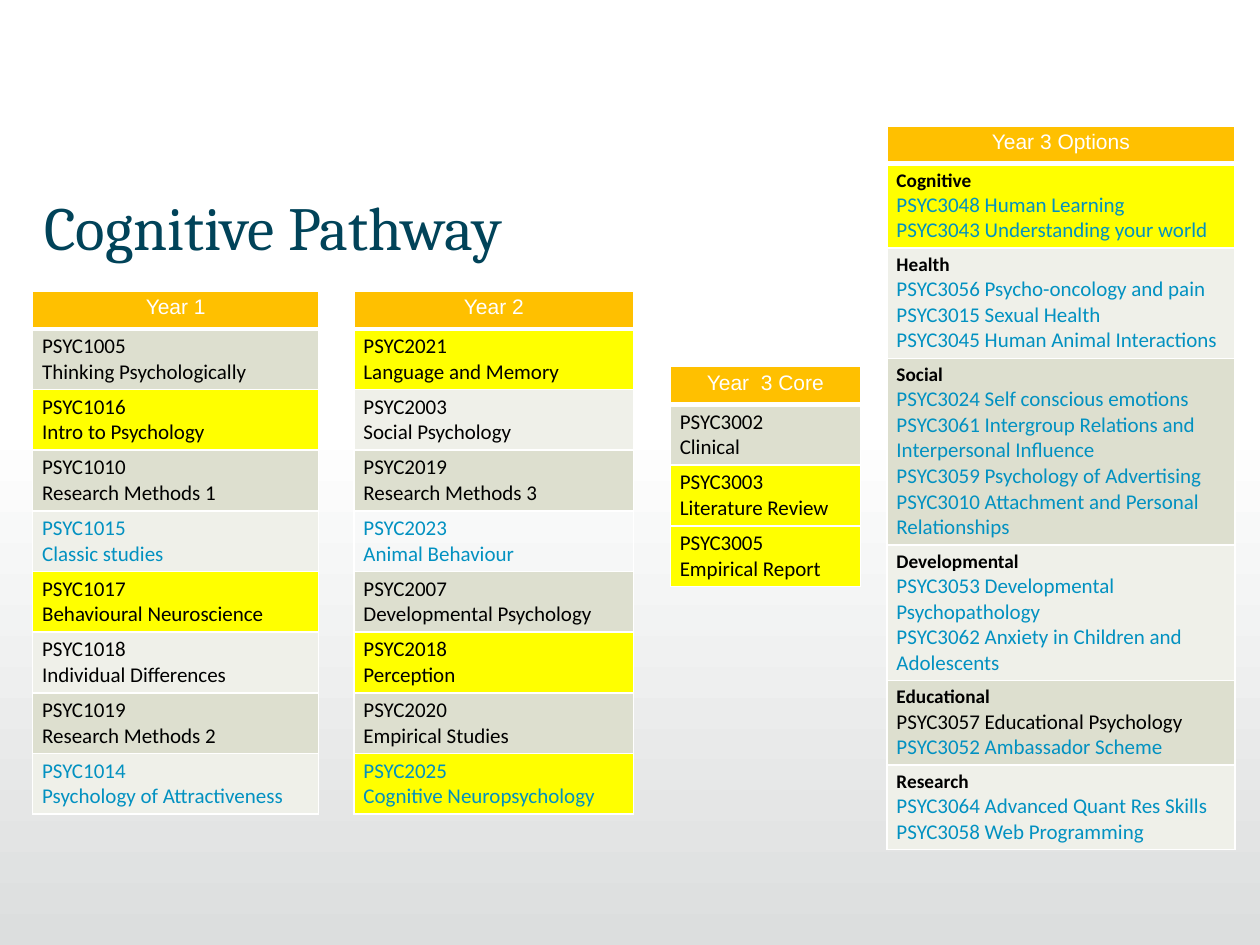
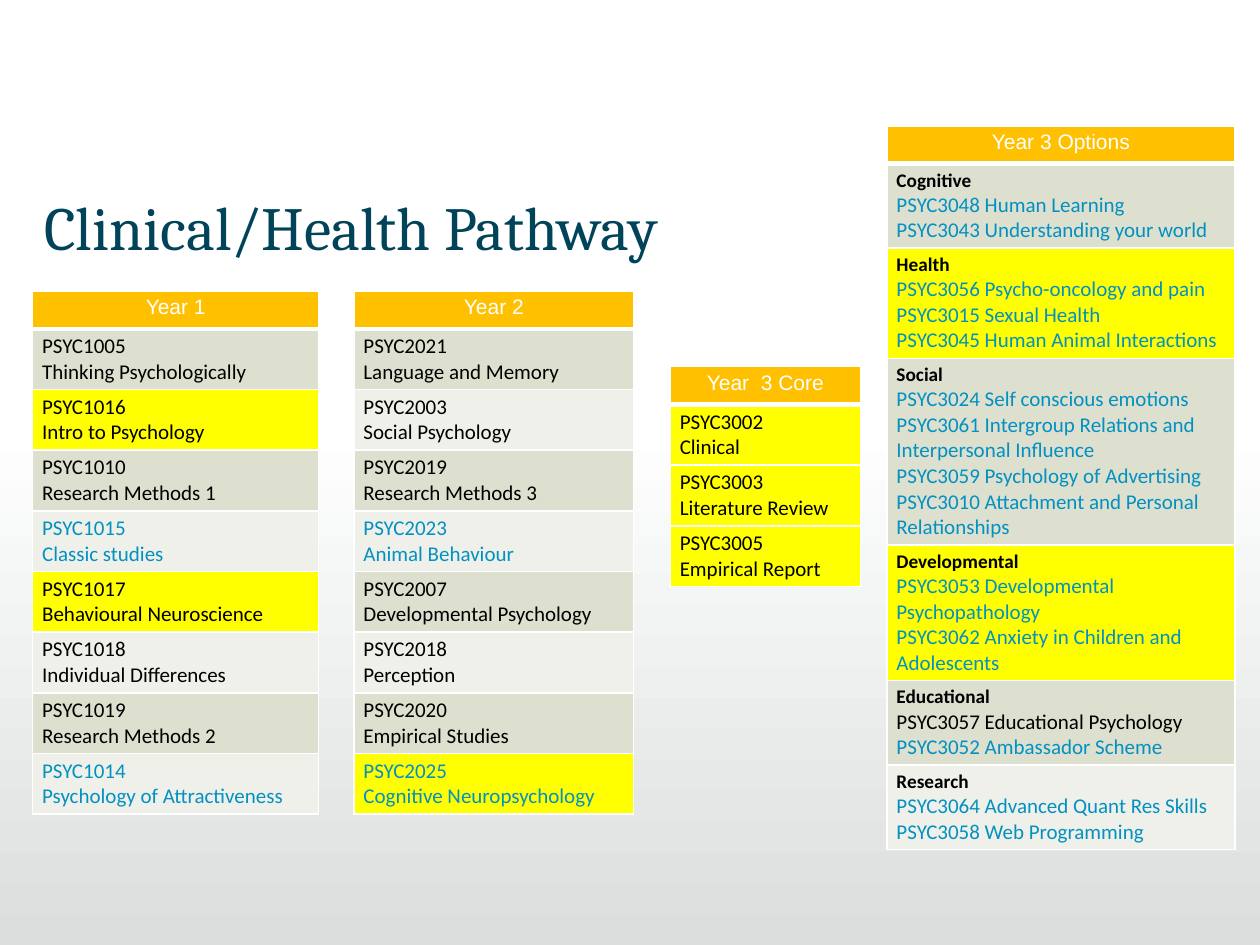
import pptx
import pptx.dml.color
import pptx.enum.shapes
import pptx.enum.text
import pptx.oxml
import pptx.oxml.ns
import pptx.util

Inches = pptx.util.Inches
Pt = pptx.util.Pt
RGBColor = pptx.dml.color.RGBColor

WHITE = RGBColor(0xFF, 0xFF, 0xFF)
BLACK = RGBColor(0, 0, 0)
MIST = RGBColor(0xDC, 0xDE, 0xDE)
NAVY = RGBColor(0x01, 0x43, 0x59)
BLUE = RGBColor(0x02, 0x91, 0xC1)
AMBER = RGBColor(0xFF, 0xC0, 0x00)
YELLOW = RGBColor(0xFF, 0xFF, 0x00)
BANDS = (RGBColor(0xDD, 0xDF, 0xCF), RGBColor(0xEF, 0xF0, 0xE9))

TITLE = {"name": "Cambria", "size": Pt(35), "bold": False, "color": NAVY}
HEADER = {"name": "Arial", "size": Pt(12), "bold": False, "color": WHITE}
AREA = {"name": "Calibri", "size": Pt(11), "bold": True, "color": BLACK}
CORE = {"name": "Calibri", "size": Pt(12), "bold": False, "color": BLACK}
OPTION = {**CORE, "color": BLUE}

CELL_MARGINS = {
    "margin_left": Pt(5.4),
    "margin_right": Pt(5.4),
    "margin_top": Pt(2.7),
    "margin_bottom": Pt(2.7),
}
TITLE_FRAME = {
    "margin_left": 0,
    "margin_right": Inches(0.1),
    "margin_top": Inches(0.05),
    "margin_bottom": Inches(0.05),
    "word_wrap": True,
    "auto_size": pptx.enum.text.MSO_AUTO_SIZE.NONE,
    "vertical_anchor": pptx.enum.text.MSO_ANCHOR.TOP,
}
HEADER_HEIGHT = 0.3
COURSE_HEIGHT = 0.47
AREA_HEIGHTS = (0.65, 0.85, 1.45, 1.05, 0.65, 0.65)

YEAR_TABLES = (
    ("Year 1", 0.26, 2.31, 2.27, (
        ("PSYC1005", "Thinking Psychologically"),
        ("PSYC1016", "Intro to Psychology"),
        ("PSYC1010", "Research Methods 1"),
        ("PSYC1015", "Classic studies"),
        ("PSYC1017", "Behavioural Neuroscience"),
        ("PSYC1018", "Individual Differences"),
        ("PSYC1019", "Research Methods 2"),
        ("PSYC1014", "Psychology of Attractiveness"),
    )),
    ("Year 2", 2.81, 2.31, 2.22, (
        ("PSYC2021", "Language and Memory"),
        ("PSYC2003", "Social Psychology"),
        ("PSYC2019", "Research Methods 3"),
        ("PSYC2023", "Animal Behaviour"),
        ("PSYC2007", "Developmental Psychology"),
        ("PSYC2018", "Perception"),
        ("PSYC2020", "Empirical Studies"),
        ("PSYC2025", "Cognitive Neuropsychology"),
    )),
    ("Year  3 Core", 5.32, 2.91, 1.51, (
        ("PSYC3002", "Clinical"),
        ("PSYC3003", "Literature Review"),
        ("PSYC3005", "Empirical Report"),
    )),
)
OPTIONAL_CODES = {"PSYC1015", "PSYC1014", "PSYC2023", "PSYC2025"}
AREAS = {
    "Cognitive": ("PSYC3048 Human Learning", "PSYC3043 Understanding your world"),
    "Health": (
        "PSYC3056 Psycho-oncology and pain",
        "PSYC3015 Sexual Health",
        "PSYC3045 Human Animal Interactions",
    ),
    "Social": (
        "PSYC3024 Self conscious emotions",
        "PSYC3061 Intergroup Relations and Interpersonal Influence",
        "PSYC3059 Psychology of Advertising",
        "PSYC3010 Attachment and Personal Relationships",
    ),
    "Developmental": (
        "PSYC3053 Developmental Psychopathology",
        "PSYC3062 Anxiety in Children and Adolescents",
    ),
    "Educational": ("PSYC3057 Educational Psychology", "PSYC3052 Ambassador Scheme"),
    "Research": ("PSYC3064 Advanced Quant Res Skills", "PSYC3058 Web Programming"),
}
REQUIRED_OPTION = "PSYC3057 Educational Psychology"

SHARED_HIGHLIGHTS = {"PSYC1016", "PSYC1017", "PSYC2025", "PSYC3003", "PSYC3005"}
PATHWAYS = (
    ("Cognitive Pathway",
     SHARED_HIGHLIGHTS | {"PSYC2021", "PSYC2018", "Cognitive"}, {"PSYC2023"}),
    ("Clinical/Health Pathway",
     SHARED_HIGHLIGHTS | {"PSYC3002", "Health", "Developmental"}, set()),
)


def set_values(target, values):
    for name, value in values.items():
        setattr(target, name, value)


def write_lines(frame, lines, alignment=pptx.enum.text.PP_ALIGN.LEFT):
    for index, (text, style) in enumerate(lines):
        para = frame.add_paragraph() if index else frame.paragraphs[0]
        para.alignment = alignment
        span = para.add_run()
        span.text = text
        set_values(span.font, {key: style[key] for key in ("name", "size", "bold")})
        span.font.color.rgb = style["color"]


def add_borders(cell, top, bottom):
    properties = cell._tc.get_or_add_tcPr()
    widths = {"lnL": 1, "lnR": 1, "lnT": top, "lnB": bottom}
    for index, (side, width) in enumerate(widths.items()):
        properties.insert(index, pptx.oxml.parse_xml(
            f'<a:{side} {pptx.oxml.ns.nsdecls("a")} w="{Pt(width)}">'
            f'<a:solidFill><a:srgbClr val="{WHITE}"/></a:solidFill></a:{side}>'))


def fill_cell(cell, color):
    if color is None:
        cell.fill.background()
    else:
        cell.fill.solid()
        cell.fill.fore_color.rgb = color


def add_course_table(page, heading, left, top, width, rows, heights, colors):
    heights = (HEADER_HEIGHT, *heights)
    frame = page.shapes.add_table(
        len(heights), 1, Inches(left), Inches(top), Inches(width), Inches(sum(heights)))
    table = frame.table
    table.first_row = table.horz_banding = False
    all_rows = [[(heading, HEADER)], *rows]
    for index, (lines, height, color) in enumerate(
            zip(all_rows, heights, (AMBER, *colors))):
        table.rows[index].height = Inches(height)
        cell = table.cell(index, 0)
        set_values(cell, CELL_MARGINS)
        fill_cell(cell, color)
        add_borders(cell, 3 if index == 1 else 1, 1 if index else 3)
        alignment = pptx.enum.text.PP_ALIGN
        write_lines(cell.text_frame, lines, alignment.LEFT if index else alignment.CENTER)


def row_colors(keys, highlights, unfilled):
    return [
        YELLOW if key in highlights else None if key in unfilled else BANDS[index % 2]
        for index, key in enumerate(keys)
    ]


def add_year(page, heading, left, top, width, courses, highlights, unfilled):
    rows = []
    for course in courses:
        style = OPTION if course[0] in OPTIONAL_CODES else CORE
        rows.append([(text, style) for text in course])
    colors = row_colors([code for code, name in courses], highlights, unfilled)
    add_course_table(page, heading, left, top, width, rows,
                     [COURSE_HEIGHT] * len(courses), colors)


def add_options(page, highlights, unfilled):
    rows = [
        [(area, AREA)]
        + [(text, CORE if text == REQUIRED_OPTION else OPTION) for text in courses]
        for area, courses in AREAS.items()
    ]
    add_course_table(page, "Year 3 Options", 7.04, 1, 2.76, rows, AREA_HEIGHTS,
                     row_colors(AREAS, highlights, unfilled))


def add_title(page, text):
    title = page.shapes.title
    set_values(title, {"left": Inches(0.35), "top": Inches(1.45),
                       "width": Inches(9.29), "height": Inches(0.53)})
    set_values(title.text_frame, TITLE_FRAME)
    write_lines(title.text_frame, [(text, TITLE)])


def add_layout_band(page):
    band = page.shapes.add_shape(
        pptx.enum.shapes.MSO_SHAPE.RECTANGLE,
        Inches(-0.09), Inches(3.33), Inches(10.09), Inches(4.17))
    band.shadow.inherit = False
    band.line.fill.background()
    band.fill.gradient()
    band.fill.gradient_angle = 270
    for stop, position, color in zip(band.fill.gradient_stops, (0, 1), (WHITE, MIST)):
        stop.position = position
        stop.color.rgb = color
    page.slide_layout.element.cSld.spTree.insert(2, band.element)


def main():
    deck = pptx.Presentation()
    deck.slide_width = Inches(10)
    deck.slide_height = Inches(7.5)
    for index, (title, highlights, unfilled) in enumerate(PATHWAYS):
        page = deck.slides.add_slide(deck.slide_layouts[5])
        if index == 0:
            add_layout_band(page)
        add_title(page, title)
        for year in YEAR_TABLES:
            add_year(page, *year, highlights, unfilled)
        add_options(page, highlights, unfilled)
    deck.save("out.pptx")


if __name__ == "__main__":
    main()
